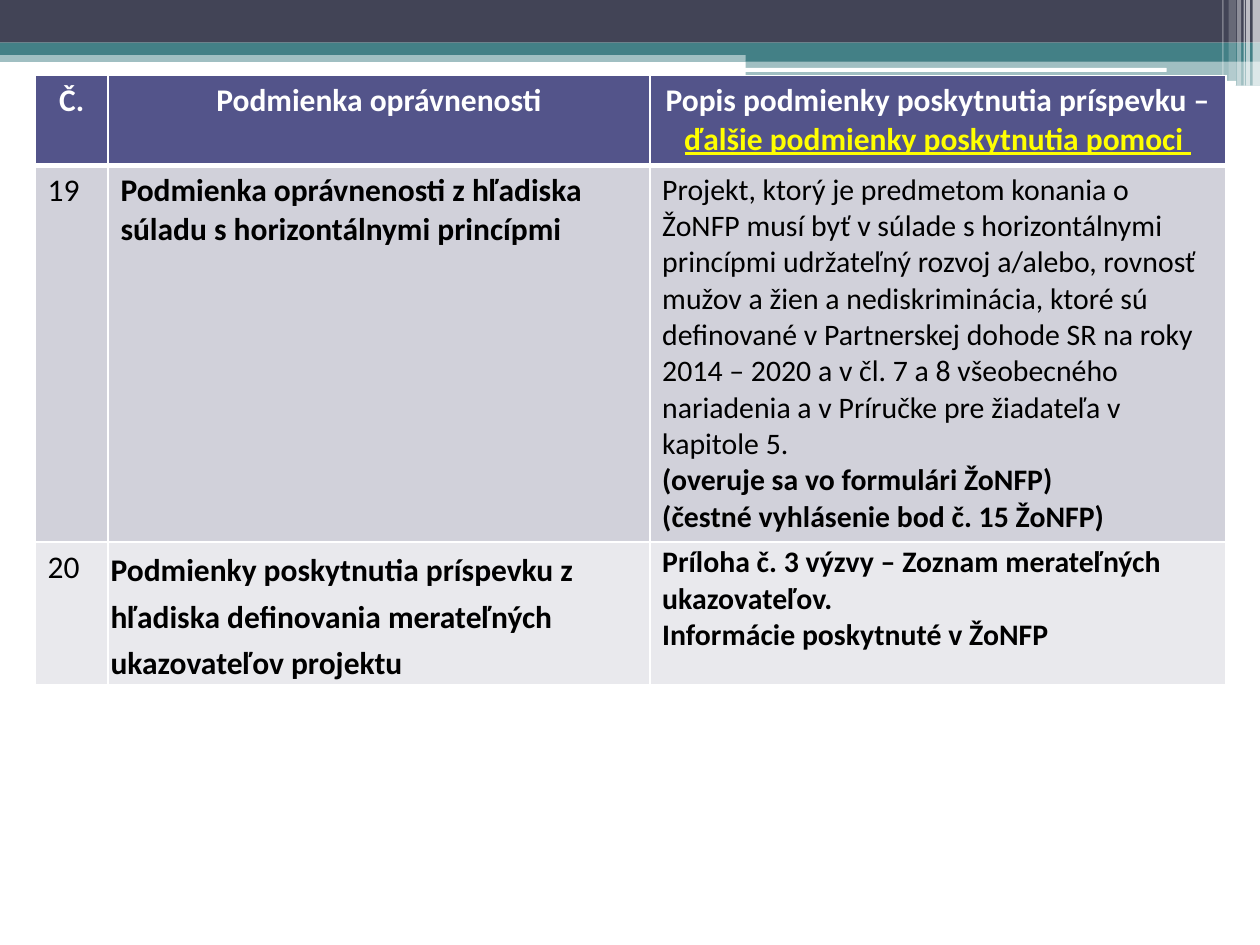
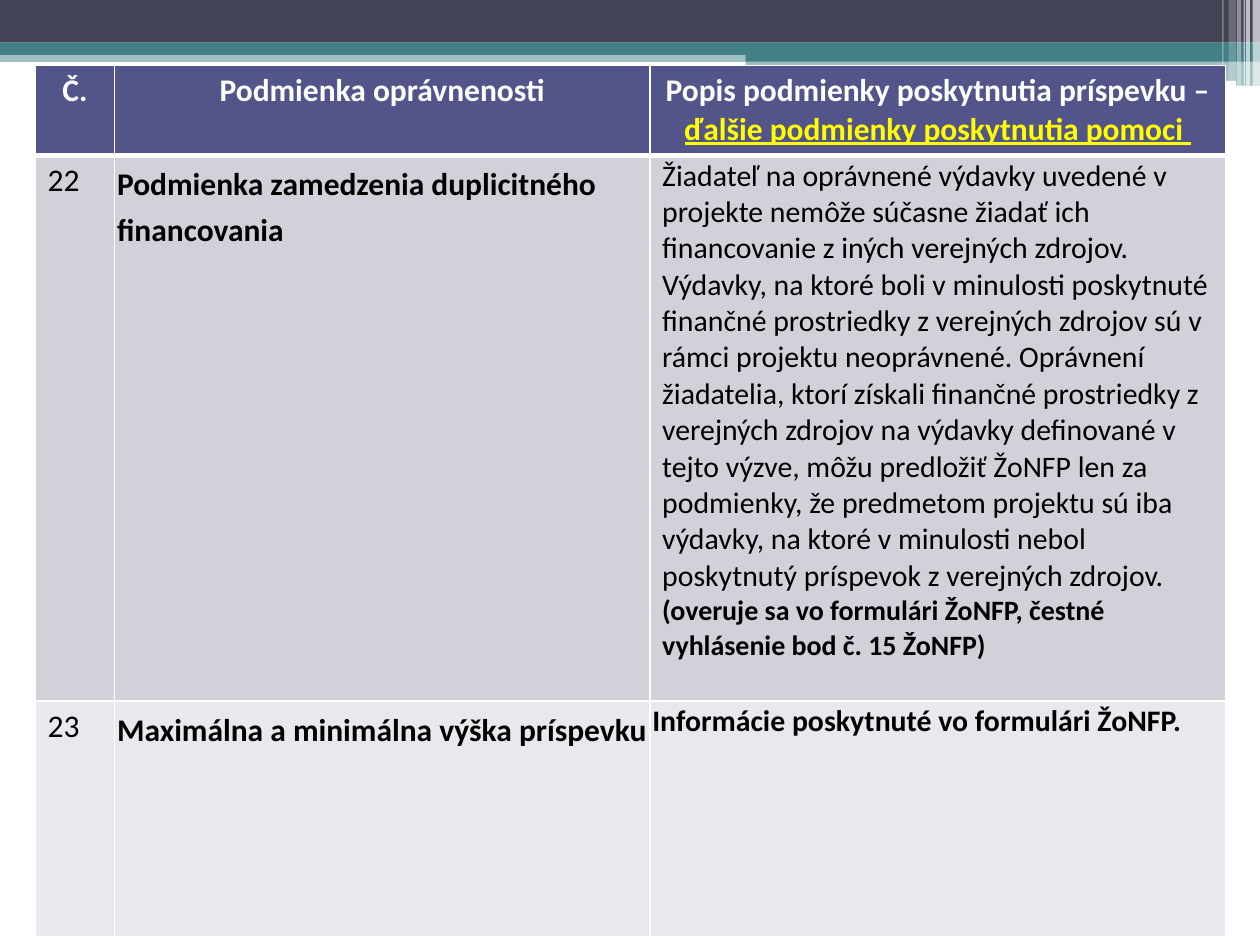
from lxml.etree import SubElement
from pptx import Presentation
from pptx.dml.color import RGBColor
from pptx.enum.shapes import MSO_SHAPE
from pptx.enum.text import PP_ALIGN
from pptx.oxml.ns import qn
from pptx.util import Cm, Pt

NAVY, TEAL, WHITE, BLACK = "424456", "438086", "FFFFFF", "000000"
HEAD, YELLOW = "53548A", "FFFF00"
BANDS = ["D1D1DA", "E9E9ED"]
FONT = "Calibri"

# Bars of the top band: left, top, width, height, colour, opacity, rounded
BARS = [
    (0, 1.02, 25.4, 0.23, TEAL, 50, False),
    (0, 0, 25.4, 0.86, NAVY, 100, False),
    (0, 0.86, 25.4, 0.25, TEAL, 100, False),
    (15.03, 0.99, 10.37, 0.25, TEAL, 100, False),
    (15.03, 1.22, 10.37, 0.51, TEAL, 50, False),
    (15.01, 1.37, 8.51, 0.08, WHITE, 100, True),
    (20.47, 1.63, 4.45, 0.1, WHITE, 100, True),
]
# Upright stripes at the right end: left, width, height, opacity
STRIPES = [
    (25.25, 0.15, 1.73, 65), (25.12, 0.08, 1.73, 65),
    (25.07, 0.03, 1.73, 60), (24.94, 0.08, 1.73, 40),
    (24.77, 0.15, 1.63, 20), (24.64, 0.03, 1.63, 30),
]

# Cell margins: left, top, right, bottom
WIDE = (0.25, 0.13, 0.25, 0.13)
TIGHT = (0.05, 0.05, 0.05, 0.05)
INSET = (0.25, 0.05, 0.05, 0.05)

# Each row: number, condition, its margins, description, its margins
# A description is a list of (text, size, bold)
FIRST = [
    ("19", "Podmienka oprávnenosti z hľadiska súladu s horizontálnymi princípmi", WIDE, [
        ("Projekt, ktorý je predmetom konania o ŽoNFP musí byť v súlade s horizontálnymi "
         "princípmi udržateľný rozvoj a/alebo, rovnosť mužov a žien a nediskriminácia, "
         "ktoré sú definované v Partnerskej dohode SR na roky 2014 – 2020 a v čl. 7 a 8 "
         "všeobecného nariadenia a v Príručke pre žiadateľa v kapitole 5.", 17, False),
        ("(overuje sa vo formulári ŽoNFP)", 17, True),
        ("(čestné vyhlásenie bod č. 15 ŽoNFP)", 17, True)], WIDE),
    ("20", "Podmienky poskytnutia príspevku z hľadiska definovania merateľných "
     "ukazovateľov projektu", TIGHT, [
         ("Príloha č. 3 výzvy – Zoznam merateľných ukazovateľov.", 17, True),
         ("Informácie poskytnuté v ŽoNFP", 17, True)], INSET),
]
SECOND = [
    ("22", "Podmienka zamedzenia duplicitného financovania", TIGHT, [
        ("Žiadateľ na oprávnené výdavky uvedené v projekte nemôže súčasne žiadať ich "
         "financovanie z iných verejných zdrojov.", 17, False),
        ("Výdavky, na ktoré boli v minulosti poskytnuté finančné prostriedky z verejných "
         "zdrojov sú v rámci projektu neoprávnené. Oprávnení žiadatelia, ktorí získali "
         "finančné prostriedky z verejných zdrojov na výdavky definované v tejto výzve, "
         "môžu predložiť ŽoNFP len za podmienky, že predmetom projektu sú iba výdavky, "
         "na ktoré v minulosti nebol poskytnutý príspevok z verejných zdrojov.", 17, False),
        ("(overuje sa vo formulári ŽoNFP, čestné vyhlásenie bod č. 15 ŽoNFP)", 16, True)], INSET),
    ("23", "Maximálna a minimálna výška príspevku", TIGHT, [
        ("Informácie poskytnuté vo formulári ŽoNFP.", 17, True)], TIGHT),
]


def paint(fill, shade, alpha=100):
    fill.solid()
    fill.fore_color.rgb = RGBColor.from_string(shade)
    if alpha < 100:
        node = fill._xPr.find(".//" + qn("a:srgbClr"))
        SubElement(node, qn("a:alpha"), val=str(alpha * 1000))


def style(run, size, bold, shade=BLACK):
    font = run.font
    font.name, font.size, font.bold = FONT, Pt(size), bold
    font.color.rgb = RGBColor.from_string(shade)


def add_bar(slide, left, top, width, height, shade, alpha, rounded):
    kind = MSO_SHAPE.ROUNDED_RECTANGLE if rounded else MSO_SHAPE.RECTANGLE
    bar = slide.shapes.add_shape(kind, Cm(left), Cm(top), Cm(width), Cm(height))
    bar.shadow.inherit = False
    bar.line.fill.background()
    paint(bar.fill, shade, alpha)


def add_band(slide):
    for bar in BARS:
        add_bar(slide, *bar)
    for left, width, height, alpha in STRIPES:
        add_bar(slide, left, 0, width, height, WHITE, alpha, False)


def dress(cell, shade, margins, top=1, bottom=1):
    """Set margins, white borders and fill of one cell."""
    (cell.margin_left, cell.margin_top,
     cell.margin_right, cell.margin_bottom) = map(Cm, margins)
    props = cell._tc.get_or_add_tcPr()
    for side, width in (("L", 1), ("R", 1), ("T", top), ("B", bottom)):
        line = SubElement(props, qn("a:ln" + side), w=str(Pt(width)))
        solid = SubElement(line, qn("a:solidFill"))
        SubElement(solid, qn("a:srgbClr"), val=WHITE)
    paint(cell.fill, shade)


def write(cell, lines):
    """Fill a cell with one paragraph for each (text, size, bold)."""
    frame = cell.text_frame
    frame.text = "\n".join(text for text, _, _ in lines)
    for para, (_, size, bold) in zip(frame.paragraphs, lines):
        style(para.runs[0], size, bold)


def add_head(table):
    titles = ["Č.", "Podmienka oprávnenosti", "Popis podmienky poskytnutia príspevku – "]
    for col, title in enumerate(titles):
        cell = table.cell(0, col)
        dress(cell, HEAD, WIDE, bottom=3)
        para = cell.text_frame.paragraphs[0]
        para.text = title
        para.alignment = PP_ALIGN.CENTER
        style(para.runs[0], 18, True, WHITE)
    # Underlined end of the last title
    run = para.add_run()
    run.text = "ďalšie podmienky poskytnutia pomoci "
    style(run, 18, True, YELLOW)
    run.font.underline = True


def add_grid(slide, left, top, widths, heights, rows):
    frame = slide.shapes.add_table(len(heights), len(widths), Cm(left), Cm(top),
                                   Cm(sum(widths)), Cm(sum(heights)))
    table = frame.table
    table.first_row = table.horz_banding = False
    for col, width in zip(table.columns, widths):
        col.width = Cm(width)
    for row, height in zip(table.rows, heights):
        row.height = Cm(height)
    add_head(table)
    for i, (number, name, edge, lines, inset) in enumerate(rows, 1):
        texts = [[(number, 18, False)], [(name, 18, True)], lines]
        for col, (text, margins) in enumerate(zip(texts, (WIDE, edge, inset))):
            cell = table.cell(i, col)
            dress(cell, BANDS[i - 1], margins, top=3 if i == 1 else 1)
            write(cell, text)
        # Tight condition cells have looser lines
        if edge == TIGHT:
            para = table.cell(i, 1).text_frame.paragraphs[0]
            para.line_spacing, para.space_before = 1.2, Pt(3)


def add_page(deck, top, widths, heights, rows):
    slide = deck.slides.add_slide(deck.slide_layouts[6])
    add_band(slide)
    add_grid(slide, 0.71, top, widths, heights, rows)


def main():
    deck = Presentation()
    deck.slide_width, deck.slide_height = Cm(25.4), Cm(19.05)
    add_page(deck, 1.52, [1.47, 10.92, 11.61], [1.8, 7.58, 2.87], FIRST)
    add_page(deck, 1.32, [1.6, 10.79, 11.61], [1.8, 11.0, 4.75], SECOND)
    deck.save("out.pptx")


if __name__ == "__main__":
    main()
